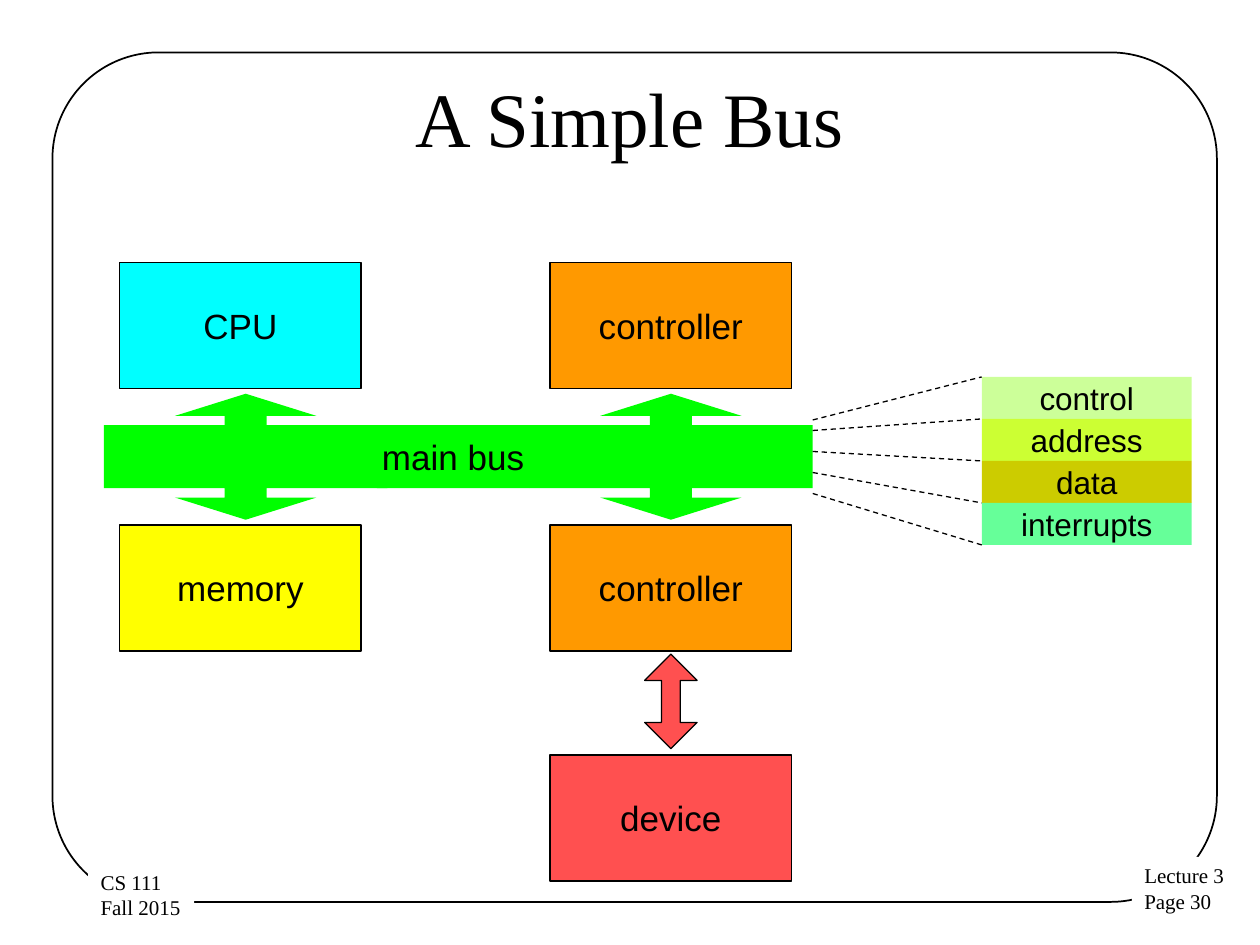
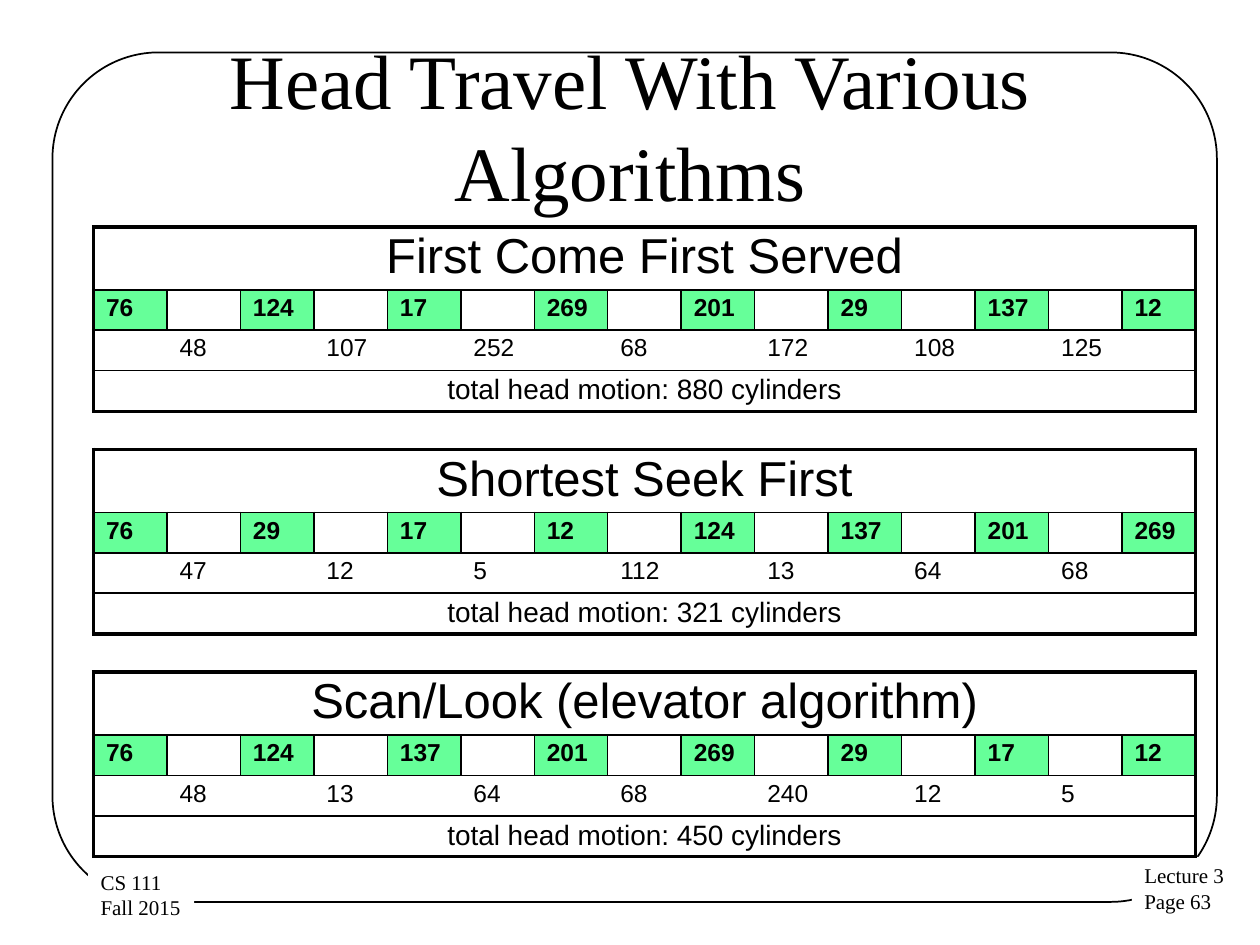
from lxml import etree
from pptx import Presentation
from pptx.dml.color import RGBColor
from pptx.enum.dml import MSO_LINE
from pptx.enum.shapes import MSO_CONNECTOR, MSO_SHAPE
from pptx.enum.text import MSO_ANCHOR, MSO_AUTO_SIZE, PP_ALIGN
from pptx.oxml.ns import qn
from pptx.util import Inches, Pt

RECTANGLE = MSO_SHAPE.RECTANGLE
ROUNDED = MSO_SHAPE.ROUNDED_RECTANGLE
BUS_ARROW = MSO_SHAPE.UP_DOWN_ARROW_CALLOUT
DOUBLE_ARROW = MSO_SHAPE.UP_DOWN_ARROW
STRAIGHT = MSO_CONNECTOR.STRAIGHT
DASH = MSO_LINE.DASH
LEFT, CENTER = PP_ALIGN.LEFT, PP_ALIGN.CENTER
TOP, MIDDLE = MSO_ANCHOR.TOP, MSO_ANCHOR.MIDDLE
NO_FIT = MSO_AUTO_SIZE.NONE

BLACK = RGBColor(0x00, 0x00, 0x00)
WHITE = RGBColor(0xFF, 0xFF, 0xFF)
GREEN = RGBColor(0x00, 0xFF, 0x00)
ORANGE = RGBColor(0xFF, 0x99, 0x00)
RED = RGBColor(0xFF, 0x50, 0x50)
CYAN = RGBColor(0x00, 0xFF, 0xFF)
YELLOW = RGBColor(0xFF, 0xFF, 0x00)
PALE_LIME = RGBColor(0xCC, 0xFF, 0x99)
LIME = RGBColor(0xCC, 0xFF, 0x33)
OLIVE = RGBColor(0xCC, 0xCC, 0x00)
MINT = RGBColor(0x66, 0xFF, 0x99)

SERIF, SANS = "Times New Roman", "Arial"
THIN, THICK = 1, 2.25
GRID_COLUMNS, GRID_ROWS = 120, 90
TITLE_ONLY = 5


class Deck:
    """Draws elements on a 120 by 90 grid in the lecture's style."""

    def __init__(self):
        self.presentation = Presentation()
        self.presentation.slide_width = Inches(10)
        self.presentation.slide_height = Inches(7.5)
        self.slide = None

    def column(self, count):
        return round(self.presentation.slide_width * count / GRID_COLUMNS)

    def row(self, count):
        return round(self.presentation.slide_height * count / GRID_ROWS)

    def area(self, left, top, width, height):
        return self.column(left), self.row(top), self.column(width), self.row(height)

    def format_text(self, frame, text, size, font_name, alignment=CENTER, bold=False):
        frame.text = text
        for paragraph in frame.paragraphs:
            paragraph.alignment = alignment
            paragraph.font.size = Pt(size)
            paragraph.font.name = font_name
            paragraph.font.bold = bold
            paragraph.font.color.rgb = BLACK

    def add_slide(self, title, page, title_top=3.6):
        layout = self.presentation.slide_layouts[TITLE_ONLY]
        self.slide = self.presentation.slides.add_slide(layout)
        self.add_shape(ROUNDED, (5, 5, 110.9, 80.9), line=1, adjustments=[0.125])
        self.add_footer(107.8, 81.6, f"Lecture 3\nPage {page}")
        self.add_footer(8.4, 82.2, "CS 111\nFall 2015")
        placeholder = self.slide.shapes.title
        (placeholder.left, placeholder.top,
         placeholder.width, placeholder.height) = self.area(6, title_top, 108, 15)
        frame = placeholder.text_frame
        self.format_text(frame, title, 44, SERIF)
        frame.vertical_anchor = MIDDLE
        frame.word_wrap = True
        frame.auto_size = NO_FIT

    def add_shape(self, kind, area, fill=None, line=None, adjustments=()):
        shape = self.slide.shapes.add_shape(kind, *self.area(*area))
        shape.shadow.inherit = False
        for index, value in enumerate(adjustments):
            shape.adjustments[index] = value
        if fill is None:
            shape.fill.background()
        else:
            shape.fill.solid()
            shape.fill.fore_color.rgb = fill
        if line is None:
            shape.line.fill.background()
        else:
            shape.line.color.rgb = BLACK
            shape.line.width = Pt(line)
        return shape

    def add_box(self, text, area, fill, size=20, line=None):
        shape = self.add_shape(RECTANGLE, area, fill, line)
        frame = shape.text_frame
        self.format_text(frame, text, size, SANS)
        frame.word_wrap = False
        frame.vertical_anchor = MIDDLE

    def add_footer(self, left, top, text):
        shape = self.add_shape(RECTANGLE, (left, top, 10.1, 6.1), WHITE)
        frame = shape.text_frame
        self.format_text(frame, text, 12, SERIF, LEFT)
        frame.word_wrap = False
        frame.vertical_anchor = TOP

    def add_dashed_line(self, start, end):
        connector = self.slide.shapes.add_connector(
            STRAIGHT, self.column(start[0]), self.row(start[1]),
            self.column(end[0]), self.row(end[1]))
        connector.line.color.rgb = BLACK
        connector.line.width = Pt(0.75)
        connector.line.dash_style = DASH
        etree.SubElement(connector.element.spPr, qn("a:effectLst"))

    def set_borders(self, cell, **widths):
        properties = cell._tc.get_or_add_tcPr()
        for side in "LRTB":
            width = widths[side]
            border = etree.SubElement(properties, qn(f"a:ln{side}"), w=str(Pt(width)))
            if width:
                fill = etree.SubElement(border, qn("a:solidFill"))
                etree.SubElement(fill, qn("a:srgbClr"), val=str(BLACK))
            else:
                etree.SubElement(border, qn("a:noFill"))

    def format_cell(self, cell, text, size, alignment, bold, fill):
        cell.margin_left = cell.margin_right = Inches(0.1)
        cell.margin_top, cell.margin_bottom = Inches(0.05), Inches(0.03)
        self.format_text(cell.text_frame, text, size, SANS, alignment, bold)
        paragraph = cell.text_frame.paragraphs[0]
        paragraph.line_spacing = 0.93
        if not text:
            etree.SubElement(paragraph._p, qn("a:endParaRPr"), sz=str(size * 100))
        if fill is None:
            cell.fill.background()
        else:
            cell.fill.solid()
            cell.fill.fore_color.rgb = fill

    def add_travel_table(self, top, name, cylinders, distances, total):
        row_heights = (6, 3.85, 3.85, 3.9)
        count = 2 * len(cylinders) - 1
        last_row, last_column = len(row_heights) - 1, count - 1
        table = self.slide.shapes.add_table(
            len(row_heights), count,
            *self.area(8.9, top, 7 * count, sum(row_heights))).table
        table.first_row = table.horz_banding = False
        for column in table.columns:
            column.width = self.column(7)
        texts = {(0, 0): name, (last_row, 0): f"total head motion: {total} cylinders"}
        texts.update({(1, 2 * i): str(value) for i, value in enumerate(cylinders)})
        texts.update({(2, 2 * i + 1): str(value) for i, value in enumerate(distances)})
        for row, height in enumerate(row_heights):
            table.rows[row].height = self.row(height)
            merged = row in (0, last_row)
            if merged:
                table.cell(row, 0).merge(table.cell(row, last_column))
            inner = THIN if row == 1 else 0
            size = {0: 28, last_row: 16}.get(row, 14)
            for column in range(count):
                cell = table.cell(row, column)
                closes_row = column == last_column or cell.is_merge_origin
                self.set_borders(
                    cell,
                    L=THICK if column == 0 else inner,
                    R=THICK if closes_row else inner,
                    T=THICK if row == 0 else THIN,
                    B=THICK if row == last_row else THIN)
                visited = row == 1 and column % 2 == 0
                self.format_cell(cell, texts.get((row, column), ""), size,
                                 CENTER if merged else LEFT, visited,
                                 MINT if visited else None)


def build_bus_slide(deck):
    deck.add_slide("A Simple Bus", 30)
    bus_shape = [0.333, 0.562, 0.176, 0.5]
    deck.add_shape(BUS_ARROW, (9.9, 37.5, 27, 12), GREEN, adjustments=bus_shape)
    deck.add_box("main bus", (35.9, 40.5, 14.5, 6), GREEN)
    deck.add_shape(BUS_ARROW, (50.4, 37.5, 27, 12), GREEN, adjustments=bus_shape)

    processor_column, device_column = 11.4, 52.4
    for text, left, top, fill in (
            ("controller", device_column, 25, ORANGE),
            ("controller", device_column, 50, ORANGE),
            ("device", device_column, 71.9, RED),
            ("CPU", processor_column, 25, CYAN),
            ("memory", processor_column, 50, YELLOW)):
        deck.add_box(text, (left, top, 23, 12), fill, line=0.75)
    deck.add_shape(DOUBLE_ARROW, (61.4, 62.3, 5, 9), RED, 0.75, [0.5, 0.36])

    signals_left, signals_top, signal_height = 93.5, 35.9, 4
    signals = (("control", PALE_LIME), ("address", LIME),
               ("data", OLIVE), ("interrupts", MINT))
    for index, (text, fill) in enumerate(signals):
        top = signals_top + index * signal_height
        deck.add_box(text, (signals_left, top, 20, signal_height), fill, size=18)
    for index, bus_row in enumerate((40, 41, 43, 45, 47)):
        deck.add_dashed_line((77.4, bus_row),
                             (signals_left, signals_top + index * signal_height))


def build_head_travel_slide(deck):
    deck.add_slide("Head Travel With Various Algorithms", 63, title_top=4.4)
    algorithms = (
        ("First Come First Served", (76, 124, 17, 269, 201, 29, 137, 12),
         (48, 107, 252, 68, 172, 108, 125), 880),
        ("Shortest Seek First", (76, 29, 17, 12, 124, 137, 201, 269),
         (47, 12, 5, 112, 13, 64, 68), 321),
        ("Scan/Look (elevator algorithm)", (76, 124, 137, 201, 269, 29, 17, 12),
         (48, 13, 64, 68, 240, 12, 5), 450))
    for index, algorithm in enumerate(algorithms):
        deck.add_travel_table(21.6 + 21.2 * index, *algorithm)


def main():
    deck = Deck()
    build_bus_slide(deck)
    build_head_travel_slide(deck)
    deck.presentation.save("out.pptx")


if __name__ == "__main__":
    main()
